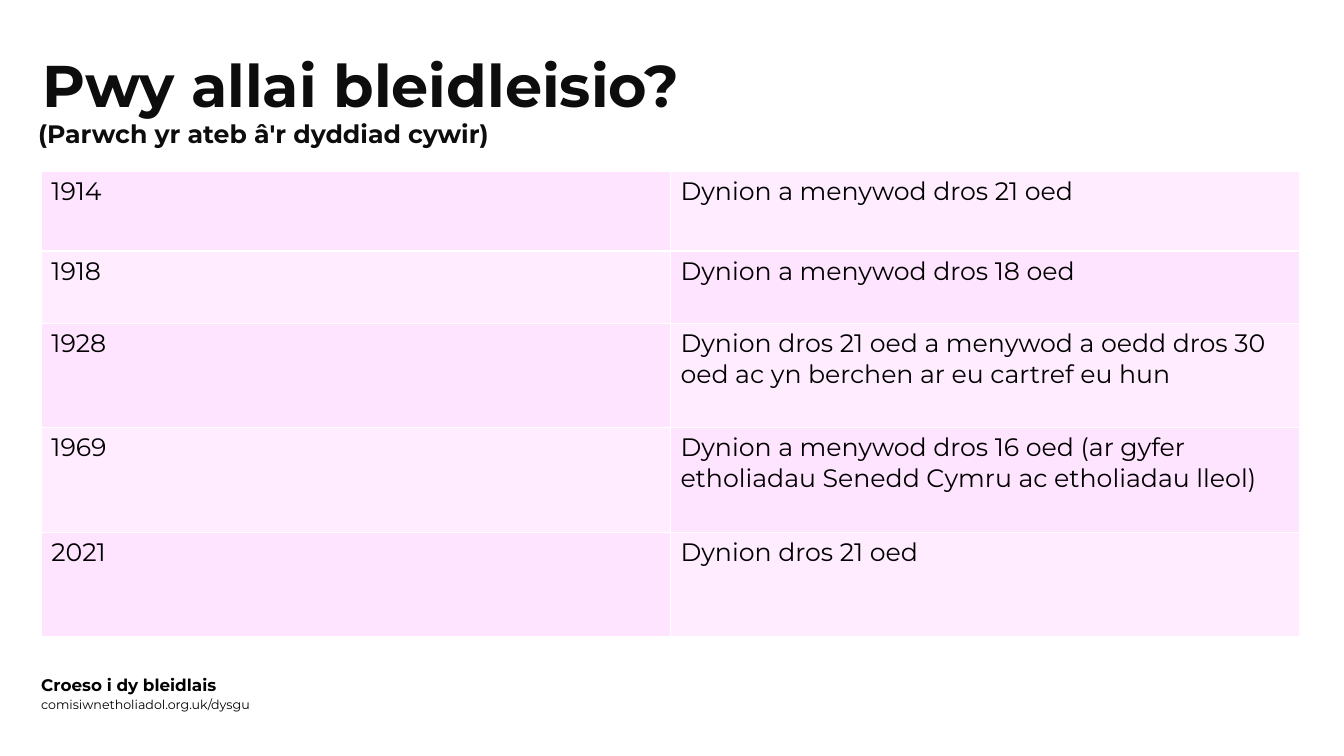
from lxml.etree import SubElement
from pptx import Presentation
from pptx.dml.color import RGBColor
from pptx.enum.text import MSO_ANCHOR
from pptx.oxml.ns import qn
from pptx.util import Inches, Pt

FONT = "Montserrat"
INK, BLACK, WHITE, PINK = "0D0D0D", "000000", "FFFFFF", "FF8BFF"
DARK_TINT, LIGHT_TINT = 23, 15
ROWS = [
    ("1914", "Dynion a menywod dros 21 oed", 0.79),
    ("1918", "Dynion a menywod dros 18 oed", 0.72),
    ("1928", "Dynion dros 21 oed a menywod a oedd dros 30 oed ac yn berchen ar eu cartref eu hun", 1.03),
    ("1969", "Dynion a menywod dros 16 oed (ar gyfer etholiadau Senedd Cymru ac etholiadau lleol)", 1.04),
    ("2021", "Dynion dros 21 oed", 1.04),
]


def rgb(value):
    """Turn a hex string into a colour."""
    return RGBColor.from_string(value)


def style(p, size, color, bold=False):
    """Set the font of a whole paragraph."""
    p.font.name, p.font.size, p.font.bold = FONT, Pt(size), bold
    p.font.color.rgb = rgb(color)


def add_text(s, box, text, size, color, bold=False, anchor=MSO_ANCHOR.TOP, spacing=1.0):
    """Place one line of text in a box given in inches."""
    tf = s.shapes.add_textbox(*map(Inches, box)).text_frame
    tf.word_wrap = True
    tf.vertical_anchor = anchor
    p = tf.paragraphs[0]
    p.text = text
    p.line_spacing = spacing
    style(p, size, color, bold)


def add_heading(s, left, top, width):
    """Place the title with its instruction below."""
    add_text(s, (left, top, width, 0.75), "Pwy allai bleidleisio?", 42, INK, True, spacing=0.9)
    add_text(s, (left - 0.04, top + 0.67, 7.08, 0.35), "(Parwch yr ateb â'r dyddiad cywir)",
             18, INK, True, spacing=0.8)


def style_cell(cell, tint):
    """Give a cell white borders and a translucent pink fill."""
    tc_pr = cell._tc.get_or_add_tcPr()
    for side in ("a:lnL", "a:lnR", "a:lnT", "a:lnB"):
        line = SubElement(tc_pr, qn(side), w=str(Pt(1)))
        SubElement(SubElement(line, qn("a:solidFill")), qn("a:srgbClr"), val=WHITE)
    cell.fill.solid()
    cell.fill.fore_color.rgb = rgb(PINK)
    color = tc_pr.find(qn("a:solidFill")).find(qn("a:srgbClr"))
    SubElement(color, qn("a:alpha"), val=str(tint * 1000))


def add_matching_table(s, left, top, width):
    """Place the dates and answers in a checkered table."""
    height = sum(row[-1] for row in ROWS)
    table = s.shapes.add_table(len(ROWS), 2, *map(Inches, (left, top, width, height))).table
    table.first_row = table.horz_banding = False
    for i, (*texts, row_height) in enumerate(ROWS):
        table.rows[i].height = Inches(row_height)
        for j, text in enumerate(texts):
            cell = table.cell(i, j)
            cell.text = text
            style(cell.text_frame.paragraphs[0], 18, BLACK)
            style_cell(cell, LIGHT_TINT if (i + j) % 2 else DARK_TINT)


def add_footer(s, left, top, width):
    """Place the campaign name above its web address."""
    add_text(s, (left, top, width, 0.4), "Croeso i dy bleidlais", 12, BLACK, True, MSO_ANCHOR.MIDDLE)
    add_text(s, (left, top + 0.2, width, 0.4), "comisiwnetholiadol.org.uk/dysgu",
             9, BLACK, anchor=MSO_ANCHOR.MIDDLE)


def main():
    """Build the slide and save it."""
    prs = Presentation()
    prs.slide_width, prs.slide_height = Inches(13.33), Inches(7.5)
    s = prs.slides.add_slide(prs.slide_layouts[6])
    add_heading(s, 0.32, 0.51, 10.98)
    add_matching_table(s, 0.41, 1.7, 12.48)
    add_footer(s, 0.31, 6.59, 7.65)
    prs.save("out.pptx")


if __name__ == "__main__":
    main()
